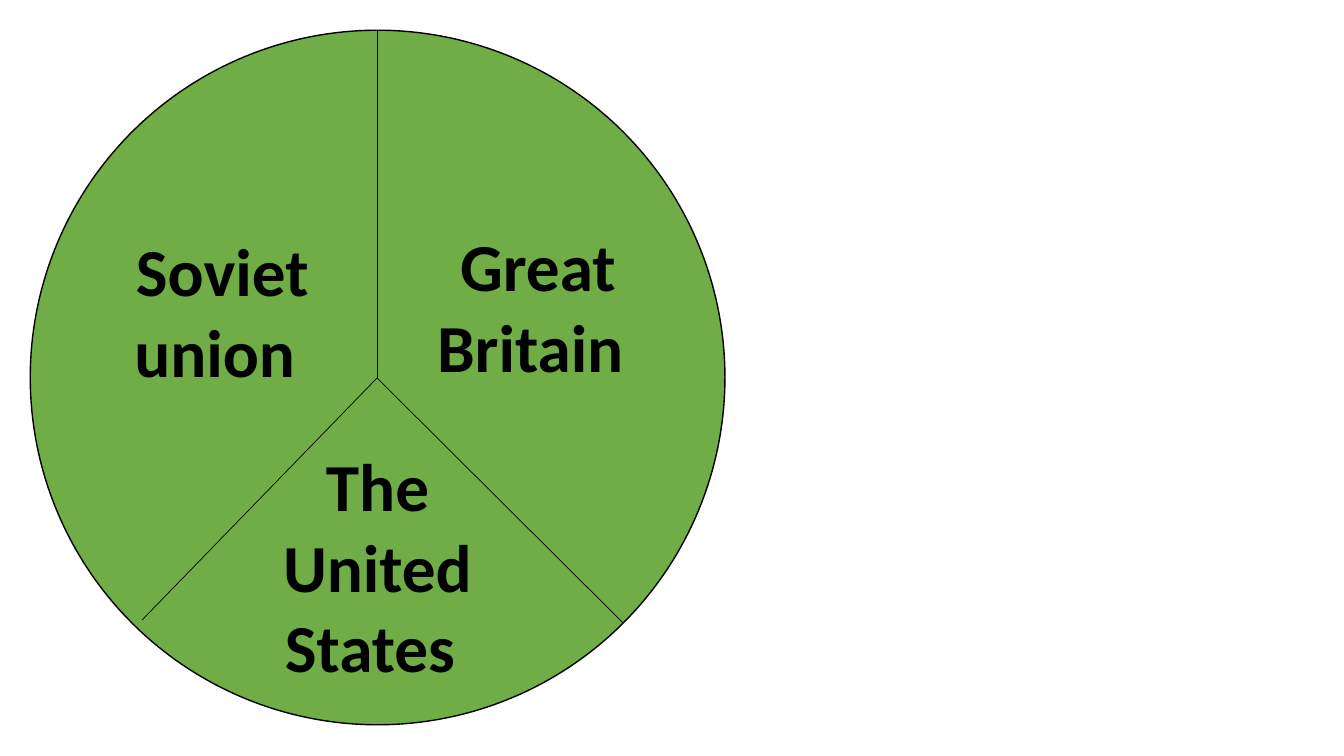
from lxml import etree
from pptx import Presentation
from pptx.dml.color import RGBColor
from pptx.enum.shapes import MSO_CONNECTOR, MSO_SHAPE
from pptx.enum.text import MSO_AUTO_SIZE, PP_ALIGN
from pptx.oxml.ns import qn
from pptx.util import Inches, Pt

COLORS = {"circle": "70AD47", "line": "000000", "text": "000000", "outline": "FFFFFF"}
FONT = "Calibri"

# Circle: left and top edge, diameter
CIRCLE_EDGE, DIAMETER = 0.3, 6.89
CENTER = (3.74, 3.75)

# Outer ends of the dividing lines
DIVIDER_ENDS = [(3.74, 0.3), (1.41, 6.15), (6.18, 6.18)]

# Label text (the closing space shifts the centred last line): left, top, width, height
LABELS = [
    ("Soviet union ", (1.23, 2.23, 1.95, 1.72)),
    ("The United States ", (2.33, 4.36, 2.83, 2.52)),
    ("Great Britain ", (3.92, 2.18, 2.83, 1.72)),
]


def color(name):
    return RGBColor.from_string(COLORS[name])


def add_circle(slide):
    circle = slide.shapes.add_shape(
        MSO_SHAPE.OVAL, *map(Inches, (CIRCLE_EDGE, CIRCLE_EDGE, DIAMETER, DIAMETER)))
    circle.shadow.inherit = False
    circle.fill.solid()
    circle.fill.fore_color.rgb = color("circle")
    circle.line.color.rgb = color("line")
    circle.line.width = Pt(1)


def add_divider(slide, end):
    divider = slide.shapes.add_connector(
        MSO_CONNECTOR.STRAIGHT, *map(Inches, end + CENTER))
    divider.line.color.rgb = color("line")
    divider.line.width = Pt(0.5)
    etree.SubElement(divider._element.spPr, qn("a:effectLst"))


def outline_text(run):
    outline = etree.Element(qn("a:ln"), w=str(Pt(0.75)))
    fill = etree.SubElement(outline, qn("a:solidFill"))
    etree.SubElement(fill, qn("a:srgbClr"), val=COLORS["outline"])
    run._r.get_or_add_rPr().insert(0, outline)


def add_label(slide, text, place):
    label = slide.shapes.add_textbox(*map(Inches, place))
    frame = label.text_frame
    frame.word_wrap = True
    frame.auto_size = MSO_AUTO_SIZE.SHAPE_TO_FIT_TEXT
    frame.text = text
    paragraph = frame.paragraphs[0]
    paragraph.alignment = PP_ALIGN.CENTER
    run = paragraph.runs[0]
    run.font.name = FONT
    run.font.size = Pt(48)
    run.font.bold = True
    run.font.color.rgb = color("text")
    outline_text(run)


def main():
    presentation = Presentation()
    presentation.slide_width = Inches(13.33)
    presentation.slide_height = Inches(7.5)
    slide = presentation.slides.add_slide(presentation.slide_layouts[6])

    # Circle split into three sectors
    add_circle(slide)
    for end in DIVIDER_ENDS:
        add_divider(slide, end)

    # Sector names
    for text, place in LABELS:
        add_label(slide, text, place)

    presentation.save("out.pptx")


if __name__ == "__main__":
    main()
